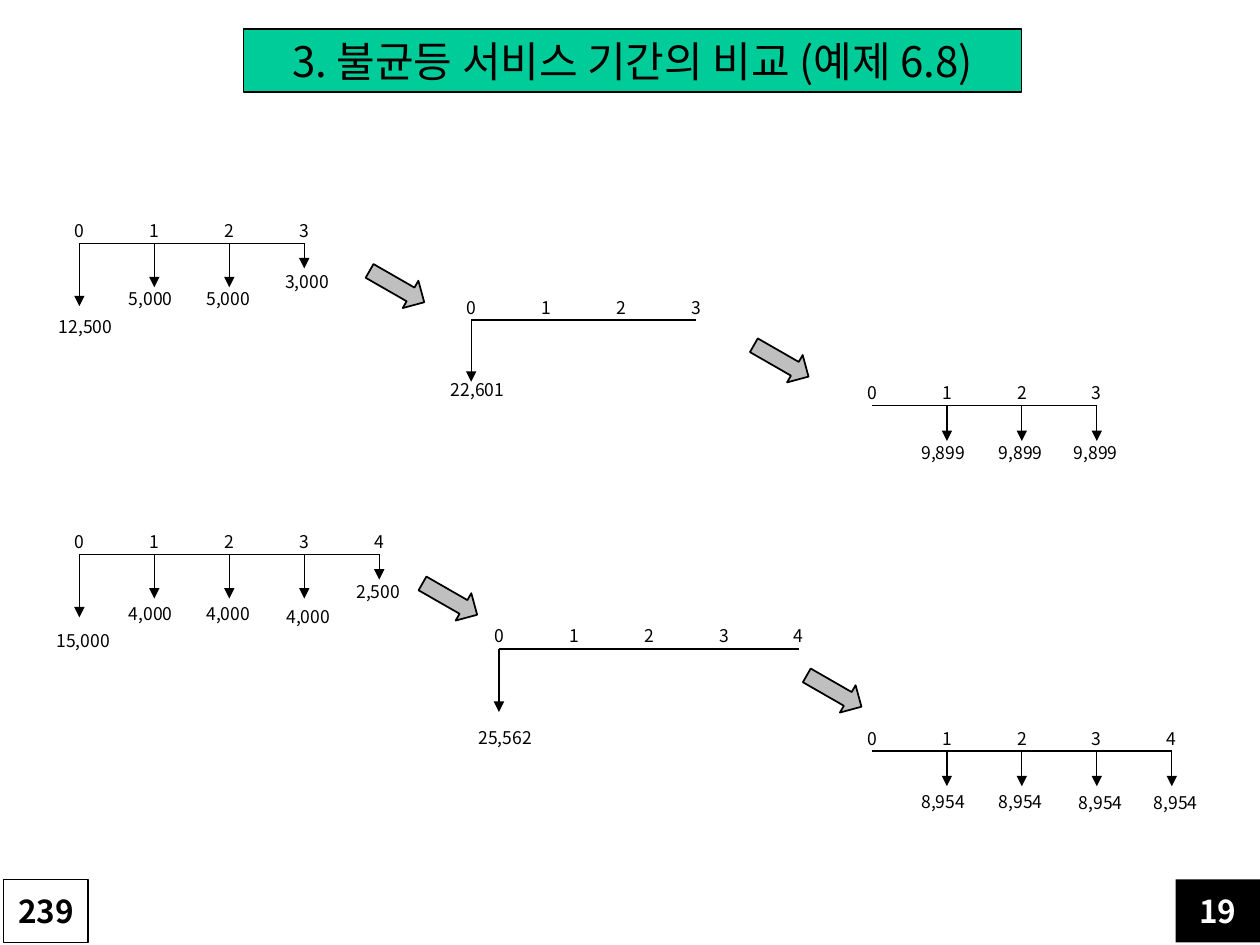
from lxml.etree import SubElement
from pptx import Presentation
from pptx.dml.color import RGBColor
from pptx.enum.shapes import MSO_CONNECTOR, MSO_SHAPE
from pptx.enum.text import MSO_ANCHOR, MSO_AUTO_SIZE, PP_ALIGN
from pptx.oxml.ns import qn
from pptx.util import Inches, Pt

COLORS = {"ink": "000000", "paper": "FFFFFF", "title": "00CC99", "arrow": "BFBFBF"}
FONT = "Noto Sans CJK KR"
COLUMNS, ROWS = 100, 75
PERIOD = 5.95

TIMELINES = [
    (6.3, 19.3, 3, [(0, "12,500", 5, 5.3, -2.6), (1, "5,000", 3.5, 3.1, -3),
                    (2, "5,000", 3.5, 3.1, -2.8), (3, "3,000", 2, 1.7, -2.5)]),
    (37.4, 25.4, 3, [(0, "22,601", 4.9, 4.2, -2.6)]),
    (69.2, 32.2, 3, [(1, "9,899", 2.8, 2.4, -3), (2, "9,899", 2.8, 2.4, -2.8),
                     (3, "9,899", 2.8, 2.4, -2.8)]),
    (6.3, 44, 4, [(0, "15,000", 5, 5.5, -2.8), (1, "4,000", 3.5, 3.4, -3),
                  (2, "4,000", 3.5, 3.4, -2.8), (3, "4,000", 3.5, 3.6, -2.4),
                  (4, "2,500", 2, 1.6, -2.8)]),
    (39.6, 51.5, 4, [(0, "25,562", 5, 5.7, -2.6)]),
    (69.2, 59.6, 4, [(1, "8,954", 2.8, 2.7, -3), (2, "8,954", 2.8, 2.7, -2.8),
                     (3, "8,954", 2.8, 2.8, -2.4), (4, "8,954", 2.8, 2.8, -2.4)]),
]
STEP_ARROWS = [(29, 21.5), (59.5, 27.4), (33.2, 46.3), (63.7, 53.6)]


class CashFlowSlide:
    """Holds the deck, its current page and the drawing style on a grid."""

    def __init__(self):
        self.deck = Presentation()
        self.deck.slide_width, self.deck.slide_height = Inches(10), Inches(7.5)
        self.page = self.deck.slides.add_slide(self.deck.slide_layouts[5])

    def place(self, *lengths):
        units = (self.deck.slide_width / COLUMNS, self.deck.slide_height / ROWS)
        return [round(length * units[i % 2]) for i, length in enumerate(lengths)]

    def set_text(self, box, text, size, color="ink", bold=False, align=PP_ALIGN.CENTER):
        frame = box.text_frame
        frame.text = text
        para = frame.paragraphs[0]
        para.alignment = align
        para.font.name, para.font.size, para.font.bold = FONT, Pt(size), bold
        para.font.color.rgb = RGBColor.from_string(COLORS[color])
        defaults = para._p.get_or_add_pPr().find(qn("a:defRPr"))
        SubElement(defaults, qn("a:ea")).set("typeface", FONT)
        return frame

    def paint(self, box, fill, width=0.75):
        box.fill.solid()
        box.fill.fore_color.rgb = RGBColor.from_string(COLORS[fill])
        box.line.color.rgb = RGBColor.from_string(COLORS["ink"])
        box.line.width = Pt(width)

    def title(self, text, *area):
        box = self.page.shapes.title
        box.left, box.top, box.width, box.height = self.place(*area)
        self.paint(box, "title")
        frame = self.set_text(box, text, 24)
        frame.word_wrap = False
        frame.auto_size = MSO_AUTO_SIZE.NONE

    def shape(self, kind, area, fill, width=0.75):
        box = self.page.shapes.add_shape(kind, *self.place(*area))
        box.shadow.inherit = False
        self.paint(box, fill, width)
        return box

    def number_box(self, text, left, fill, color):
        box = self.shape(MSO_SHAPE.RECTANGLE, (left, 69.8, 6.7, 5), fill)
        if fill == "ink":
            box.line.fill.background()
        self.set_text(box, text, 18, color, bold=True).vertical_anchor = MSO_ANCHOR.MIDDLE

    def label(self, text, left, top, width, align=PP_ALIGN.LEFT):
        box = self.page.shapes.add_textbox(*self.place(left, top, width, 2.7))
        frame = self.set_text(box, text, 10, align=align)
        frame.word_wrap = False
        frame.auto_size = MSO_AUTO_SIZE.SHAPE_TO_FIT_TEXT

    def line(self, *ends, arrow=False):
        connector = self.page.shapes.add_connector(MSO_CONNECTOR.STRAIGHT, *self.place(*ends))
        connector.line.color.rgb = RGBColor.from_string(COLORS["ink"])
        connector.line.width = Pt(0.75)
        if arrow:
            outline = connector._element.spPr.find(qn("a:ln"))
            SubElement(outline, qn("a:tailEnd")).set("type", "triangle")
        SubElement(connector._element.spPr, qn("a:effectLst"))

    def timeline(self, left, top, periods, flows):
        self.line(left, top, left + periods * PERIOD, top)
        for period in range(periods + 1):
            center = left + period * PERIOD
            self.label(str(period), center - 1.4, top - 2.35, 2.8, PP_ALIGN.CENTER)
        for period, amount, length, drop, shift in flows:
            center = left + period * PERIOD
            self.line(center, top, center, top + length, arrow=True)
            self.label(amount, center + shift, top + drop, 1.6 + 0.8 * len(amount))

    def step_arrow(self, left, top):
        arrow = self.shape(MSO_SHAPE.RIGHT_ARROW, (left, top, 5, 2.5), "arrow", 1)
        arrow.rotation = 29.8


def main():
    slide = CashFlowSlide()
    slide.title("3. 불균등 서비스 기간의 비교 (예제 6.8)", 19.3, 2.3, 61.8, 5)
    slide.number_box("19", 93.3, "ink", "paper")
    slide.number_box("239", 0.3, "paper", "ink")
    for timeline in TIMELINES:
        slide.timeline(*timeline)
    for corner in STEP_ARROWS:
        slide.step_arrow(*corner)
    slide.deck.save("out.pptx")


if __name__ == "__main__":
    main()
